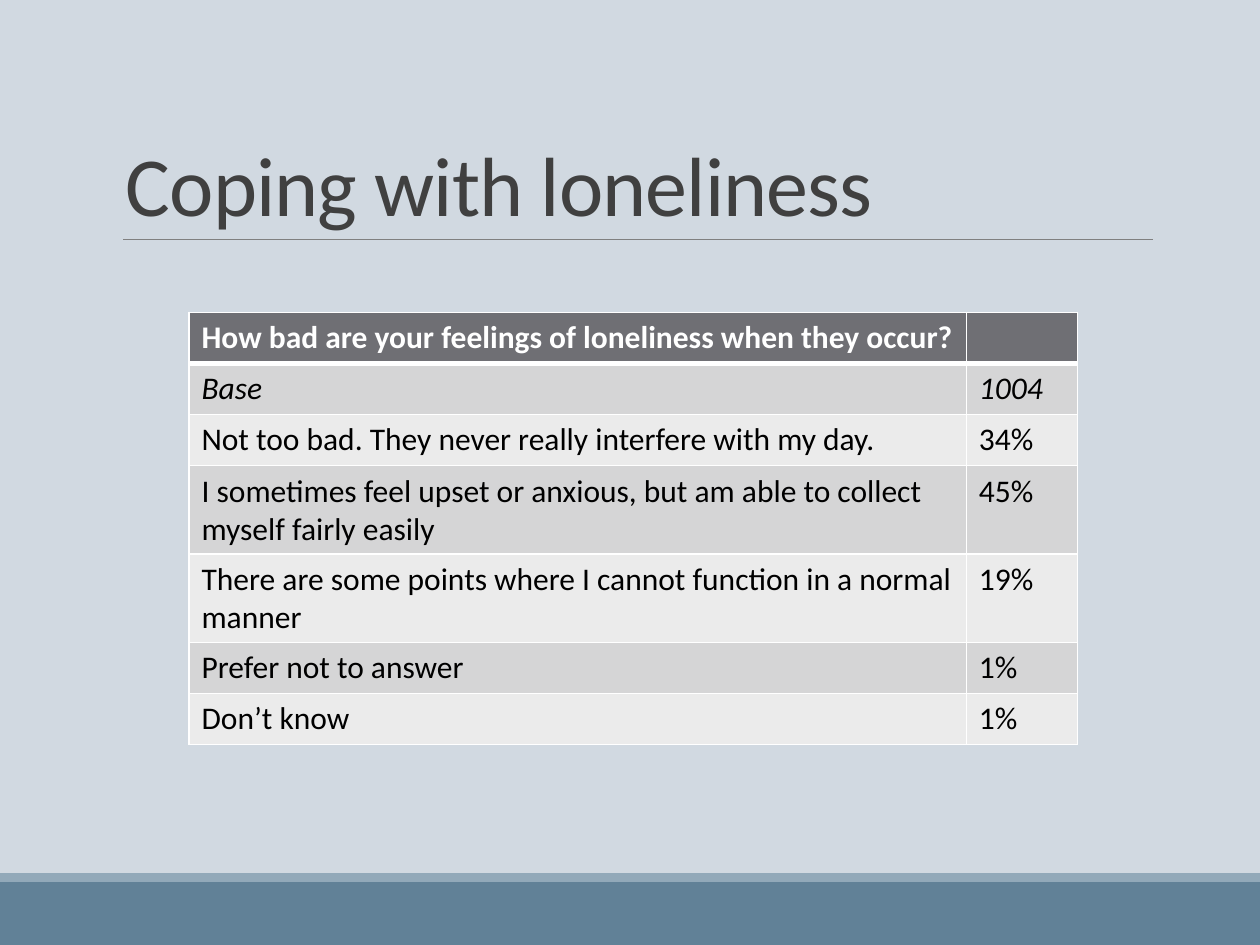
import dataclasses

import lxml.etree
import pptx
import pptx.dml.color
import pptx.enum.shapes
import pptx.enum.text
import pptx.oxml.ns
import pptx.util

WIDE, HIGH = pptx.util.Inches(10), pptx.util.Inches(7.5)
FONT = "Calibri"
ROW = pptx.util.Pt(29.2)


@dataclasses.dataclass
class Band:
    top: float  # inches
    tall: float
    fill: str


@dataclasses.dataclass
class Line:
    label: str
    value: str
    bold: bool = False
    slant: bool = False


BANDS = [Band(7, 0.5, "618197"), Band(6.93, 0.07, "92A9B9")]
LINES = [
    Line("How bad are your feelings of loneliness when they occur?", "", bold=True),
    Line("Base", "1004", slant=True),
    Line("Not too bad. They never really interfere with my day.", "34%"),
    Line("I sometimes feel upset or anxious, but am able to collect myself fairly easily", "45%"),
    Line("There are some points where I cannot function in a normal manner", "19%"),
    Line("Prefer not to answer", "1%"),
    Line("Don’t know", "1%"),
]


def color(code: str) -> pptx.dml.color.RGBColor:
    return pptx.dml.color.RGBColor.from_string(code)


def paint(fill, code: str) -> None:
    fill.solid()
    fill.fore_color.rgb = color(code)


def style(para, size: float, code: str, bold: bool = False, slant: bool = False) -> None:
    for run in para.runs:
        font = run.font
        font.name, font.size = FONT, pptx.util.Pt(size)
        font.bold, font.italic = bold, slant
        font.color.rgb = color(code)


def draw_band(slide, band: Band) -> None:
    shape = slide.shapes.add_shape(
        pptx.enum.shapes.MSO_SHAPE.RECTANGLE, 0, pptx.util.Inches(band.top),
        WIDE, pptx.util.Inches(band.tall))
    shape.shadow.inherit = False
    paint(shape.fill, band.fill)
    shape.line.fill.background()


def draw_rule(slide) -> None:
    inch = pptx.util.Inches
    rule = slide.shapes.add_connector(
        pptx.enum.shapes.MSO_CONNECTOR.STRAIGHT, inch(0.98), inch(1.9), inch(9.15), inch(1.9))
    rule.line.color.rgb = color("808080")
    rule.line.width = pptx.util.Pt(0.5)
    lxml.etree.SubElement(rule._element.spPr, pptx.oxml.ns.qn("a:effectLst"))


def draw_title(slide, text: str) -> None:
    inch = pptx.util.Inches
    frame = slide.shapes.add_textbox(inch(0.9), inch(0.31), inch(8.25), inch(1.59)).text_frame
    frame.word_wrap = True
    frame.vertical_anchor = pptx.enum.text.MSO_ANCHOR.BOTTOM
    frame.text = text
    para = frame.paragraphs[0]
    para.line_spacing = 0.85
    style(para, 48, "404040")
    para.runs[0].font._element.set("spc", "-50")


def edge_cell(cell, head: bool) -> None:
    """Draw white borders, with a thick one under the header."""
    props = cell._tc.get_or_add_tcPr()
    for side in "LRTB":
        points = 3 if head and side == "B" else 1
        edge = lxml.etree.SubElement(
            props, pptx.oxml.ns.qn(f"a:ln{side}"), w=str(pptx.util.Pt(points)))
        solid = lxml.etree.SubElement(edge, pptx.oxml.ns.qn("a:solidFill"))
        lxml.etree.SubElement(solid, pptx.oxml.ns.qn("a:srgbClr"), val="FFFFFF")


def draw_table(slide, lines: list[Line]) -> None:
    inch = pptx.util.Inches
    table = slide.shapes.add_table(
        len(lines), 2, inch(1.5), inch(2.48), inch(7.05), ROW * len(lines)).table
    for col, wide in zip(table.columns, (6.17, 0.88)):
        col.width = inch(wide)
    for num, line in enumerate(lines):
        head = num == 0
        shade = "6F6F74" if head else ("EBEBEB", "D5D5D6")[num % 2]
        ink = "FFFFFF" if head else "000000"
        for cell, text in zip(table.rows[num].cells, (line.label, line.value)):
            cell.text_frame.text = text
            style(cell.text_frame.paragraphs[0], 18, ink, line.bold, line.slant)
            edge_cell(cell, head)
            paint(cell.fill, shade)


def main() -> None:
    deck = pptx.Presentation()
    deck.slide_width, deck.slide_height = WIDE, HIGH
    slide = deck.slides.add_slide(deck.slide_layouts[6])
    paint(slide.background.fill, "D1D9E1")

    # Footer bands
    for band in BANDS:
        draw_band(slide, band)

    # Heading
    draw_rule(slide)
    draw_title(slide, "Coping with loneliness")

    # Survey answers
    draw_table(slide, LINES)
    deck.save("out.pptx")


if __name__ == "__main__":
    main()
